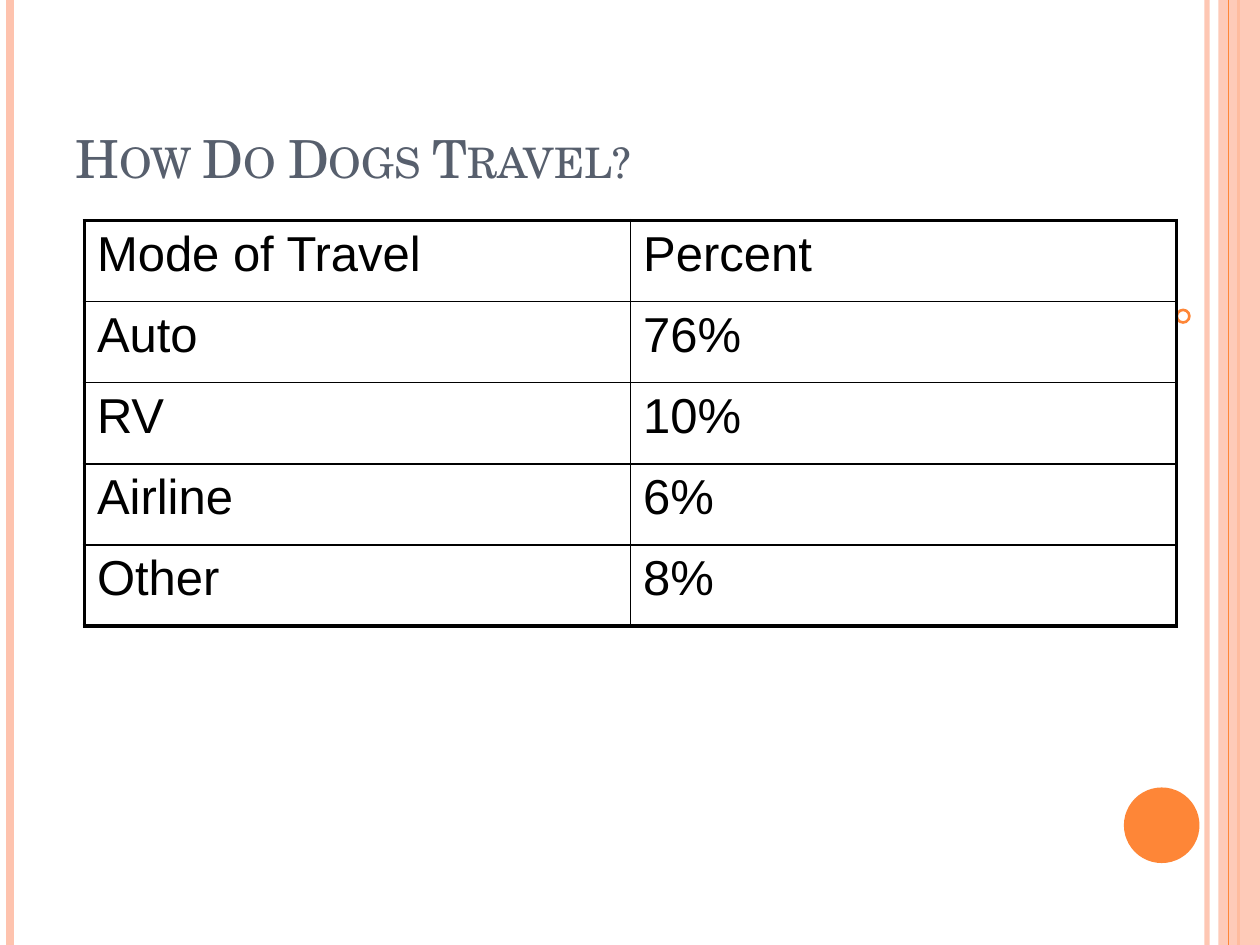
from dataclasses import dataclass

from lxml import etree
from pptx import Presentation
from pptx.dml.color import RGBColor
from pptx.enum.shapes import MSO_CONNECTOR, MSO_SHAPE
from pptx.enum.text import MSO_ANCHOR, MSO_AUTO_SIZE, PP_ALIGN
from pptx.oxml.ns import qn
from pptx.util import Pt

STRAIGHT = MSO_CONNECTOR.STRAIGHT
RECT, OVAL = MSO_SHAPE.RECTANGLE, MSO_SHAPE.OVAL
BOTTOM, LEFT, NO_FIT = MSO_ANCHOR.BOTTOM, PP_ALIGN.LEFT, MSO_AUTO_SIZE.NONE


@dataclass
class Theme:
    peach: str = "FEC3AE"
    orange: str = "FE8637"
    slate: str = "575F6D"
    black: str = "000000"
    title_font: str = "TeX Gyre Schola"
    body_font: str = "Arial"
    title_size: int = 30
    body_size: int = 28
    thin: float = 1
    thick: float = 2.25


theme = Theme()
PX = 9144
W, H = 1000, 750


def add_run(p, text, font, size, color):
    r = p.add_run()
    r.text = text
    r.font.name = font
    r.font.size = Pt(size)
    r.font.color.rgb = RGBColor.from_string(color)
    return r


def set_alpha(fill_parent, percent):
    clr = fill_parent.find(".//" + qn("a:srgbClr"))
    etree.SubElement(clr, qn("a:alpha"), val=str(percent * 1000))


prs = Presentation()
prs.slide_width, prs.slide_height = W * PX, H * PX
s = prs.slides.add_slide(prs.slide_layouts[5])

stripes = [
    ("line", 958, 3, theme.peach, 93),
    ("line", 8, 4.5, theme.peach, 100),
    ("line", 983, 1.5, theme.orange, 100),
    ("band", 967, 33, theme.peach, 87),
    ("line", 975, 0.75, theme.orange, 100),
]
for kind, x, width, color, alpha in stripes:
    if kind == "line":
        sp = s.shapes.add_connector(STRAIGHT, x * PX, 0, x * PX, H * PX)
        sp.line.width = Pt(width)
        sp.line.color.rgb = RGBColor.from_string(color)
        etree.SubElement(sp._element.spPr, qn("a:effectLst"))
    else:
        sp = s.shapes.add_shape(RECT, x * PX, 0, width * PX, H * PX)
        sp.shadow.inherit = False
        sp.fill.solid()
        sp.fill.fore_color.rgb = RGBColor.from_string(color)
        sp.line.fill.background()
    if alpha < 100:
        set_alpha(sp._element.spPr, alpha)

for x, y, size, filled in [(892, 625, 60, True), (934, 246, 10, False)]:
    sp = s.shapes.add_shape(OVAL, x * PX, y * PX, size * PX, size * PX)
    sp.shadow.inherit = False
    if filled:
        sp.fill.solid()
        sp.fill.fore_color.rgb = RGBColor.from_string(theme.orange)
        sp.line.fill.background()
    else:
        sp.fill.background()
        sp.line.width = Pt(1.5)
        sp.line.color.rgb = RGBColor.from_string(theme.orange)

title = s.shapes.title
title.left, title.top, title.width, title.height = 50 * PX, 30 * PX, 817 * PX, 125 * PX
tf = title.text_frame
tf.word_wrap = True
tf.auto_size = NO_FIT
tf.vertical_anchor = BOTTOM
p = tf.paragraphs[0]
p.alignment = LEFT
r = add_run(p, "How Do Dogs Travel?", theme.title_font, theme.title_size, theme.slate)
r.font._element.set("cap", "small")

rows = [
    ("Mode of Travel", "Percent"),
    ("Auto", "76%"),
    ("RV", "10%"),
    ("Airline", "6%"),
    ("Other", "8%"),
]
n_rows, n_cols = len(rows), len(rows[0])
table = s.shapes.add_table(n_rows, n_cols, 67 * PX, 175 * PX, 867 * PX, 322 * PX).table
table.first_row = False
table.horz_banding = False

for i, row in enumerate(rows):
    for j, text in enumerate(row):
        cell = table.cell(i, j)
        add_run(cell.text_frame.paragraphs[0], text, theme.body_font, theme.body_size, theme.black)
        tc_pr = cell._tc.get_or_add_tcPr()
        outer_edges = [
            ("a:lnL", j == 0),
            ("a:lnR", j == n_cols - 1),
            ("a:lnT", i == 0),
            ("a:lnB", i == n_rows - 1),
        ]
        for tag, is_outer in outer_edges:
            width = Pt(theme.thick if is_outer else theme.thin)
            ln = etree.SubElement(tc_pr, qn(tag), w=str(width))
            fill = etree.SubElement(ln, qn("a:solidFill"))
            etree.SubElement(fill, qn("a:srgbClr"), val=theme.black)
        cell.fill.background()

prs.save("out.pptx")
